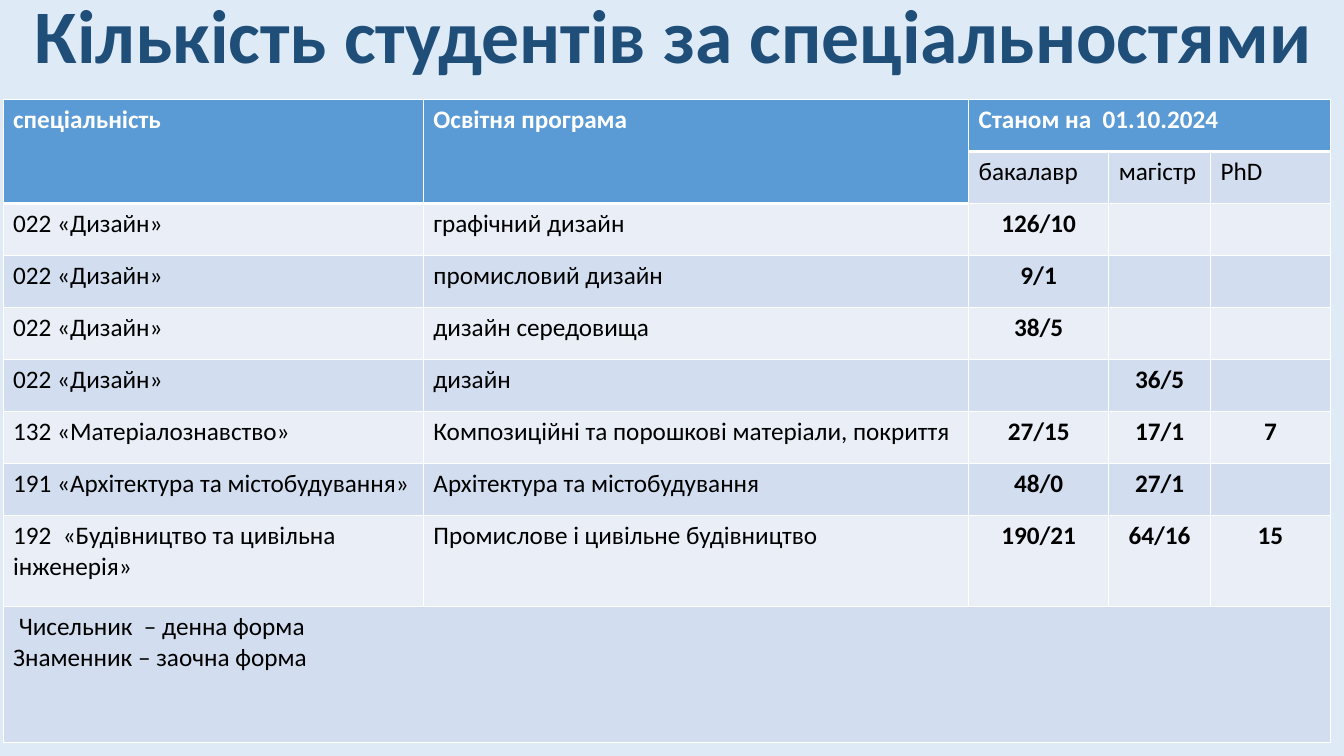
from lxml import etree
from pptx import Presentation
from pptx.dml.color import RGBColor
from pptx.enum.text import MSO_ANCHOR, PP_ALIGN
from pptx.oxml.ns import qn
from pptx.util import Pt

BOTTOM = MSO_ANCHOR.BOTTOM
LEFT, CENTER = PP_ALIGN.LEFT, PP_ALIGN.CENTER
BACKGROUND = RGBColor(0xDE, 0xEB, 0xF7)
NAVY = RGBColor(0x1F, 0x4E, 0x79)
BLUE = RGBColor(0x5B, 0x9B, 0xD5)
BANDS = [RGBColor(0xEA, 0xEF, 0xF7), RGBColor(0xD2, 0xDE, 0xEF)]
WHITE = RGBColor(0xFF, 0xFF, 0xFF)
BLACK = RGBColor(0x00, 0x00, 0x00)

COLUMN_WIDTHS = [300.2, 389.5, 100.1, 72.7, 85.7]
ROW_HEIGHTS = [37.15] * 8 + [65, 97.4]
ROWS = [
    ["спеціальність", "Освітня програма", "Станом на  01.10.2024", "", ""],
    ["", "", "бакалавр", "магістр", "PhD"],
    ["022 «Дизайн»", "графічний дизайн", "126/10", "", ""],
    ["022 «Дизайн»", "промисловий дизайн", "9/1", "", ""],
    ["022 «Дизайн»", "дизайн середовища", "38/5", "", ""],
    ["022 «Дизайн»", "дизайн", "", "36/5", ""],
    ["132 «Матеріалознавство»", "Композиційні та порошкові матеріали, покриття",
     "27/15", "17/1", "7"],
    ["191 «Архітектура та містобудування»", "Архітектура та містобудування",
     "48/0", "27/1", ""],
    ["192  «Будівництво та цивільна інженерія»", "Промислове і цивільне будівництво",
     "190/21", "64/16", "15"],
    [" Чисельник  – денна форма\nЗнаменник – заочна форма", "", "", "", ""],
]
MERGES = [(0, 0, 1, 0), (0, 1, 1, 1), (0, 2, 0, 4), (9, 0, 9, 4)]


def set_font(font, size, color, bold):
    values = {"name": "Calibri", "size": Pt(size), "bold": bold}
    for name, value in values.items():
        setattr(font, name, value)
    font.color.rgb = color


def set_borders(cell, bottom_width):
    tc_pr = cell._tc.get_or_add_tcPr()
    for side, width in {"L": 1, "R": 1, "T": 1, "B": bottom_width}.items():
        line = etree.SubElement(tc_pr, qn("a:ln" + side), w=str(Pt(width)))
        fill = etree.SubElement(line, qn("a:solidFill"))
        etree.SubElement(fill, qn("a:srgbClr"), val=str(WHITE))


prs = Presentation()
prs.slide_width, prs.slide_height = Pt(960), Pt(540)
s = prs.slides.add_slide(prs.slide_layouts[6])
s.background.fill.solid()
s.background.fill.fore_color.rgb = BACKGROUND

title = s.shapes.add_textbox(Pt(12.2), Pt(10.8), Pt(938.2), Pt(49.7))
tf = title.text_frame
tf.word_wrap = True
tf.vertical_anchor = BOTTOM
p = tf.paragraphs[0]
p.alignment = CENTER
p.line_spacing = 0.9
r = p.add_run()
r.text = "Кількість студентів за спеціальностями"
set_font(r.font, 54, NAVY, True)

frame = s.shapes.add_table(len(ROWS), len(COLUMN_WIDTHS), Pt(2.2), Pt(71),
                           Pt(sum(COLUMN_WIDTHS)), Pt(sum(ROW_HEIGHTS)))
table = frame.table
for column, width in zip(table.columns, COLUMN_WIDTHS):
    column.width = Pt(width)
for row, height in zip(table.rows, ROW_HEIGHTS):
    row.height = Pt(height)

for i, texts in enumerate(ROWS):
    for j, text in enumerate(texts):
        cell = table.cell(i, j)
        header = i == 0 or (i == 1 and j < 2)
        count = i > 1 and j > 1
        set_borders(cell, 3 if header else 1)
        cell.fill.solid()
        cell.fill.fore_color.rgb = BLUE if header else BANDS[i % 2]
        cell.text = text
        for p in cell.text_frame.paragraphs:
            p.alignment = CENTER if count else LEFT
            set_font(p.font, 18, WHITE if header else BLACK, header or count)
            for r in p.runs:
                set_font(r.font, 18, WHITE if header else BLACK, header or count)

for top, left, bottom, right in MERGES:
    table.cell(top, left).merge(table.cell(bottom, right))

prs.save("out.pptx")
